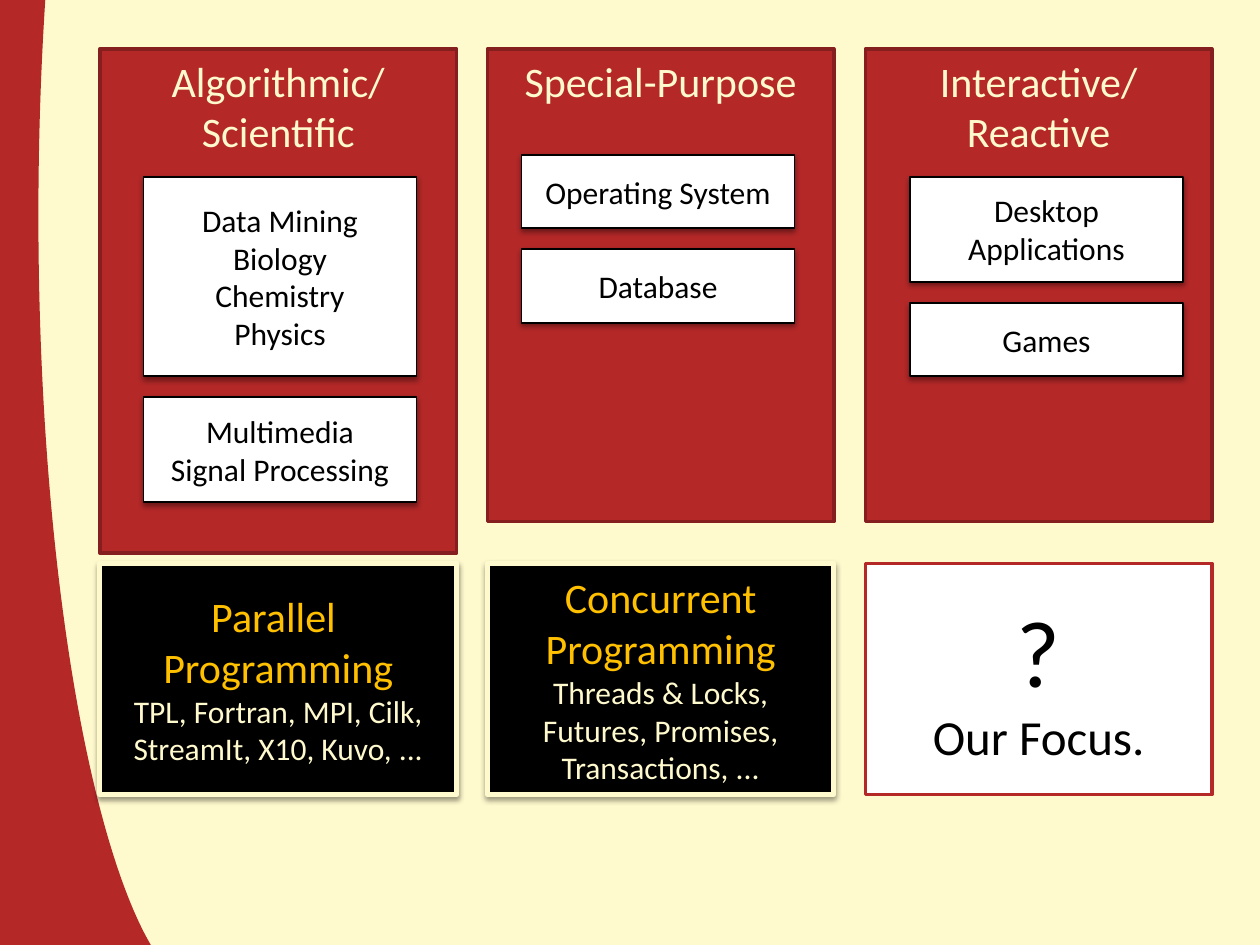
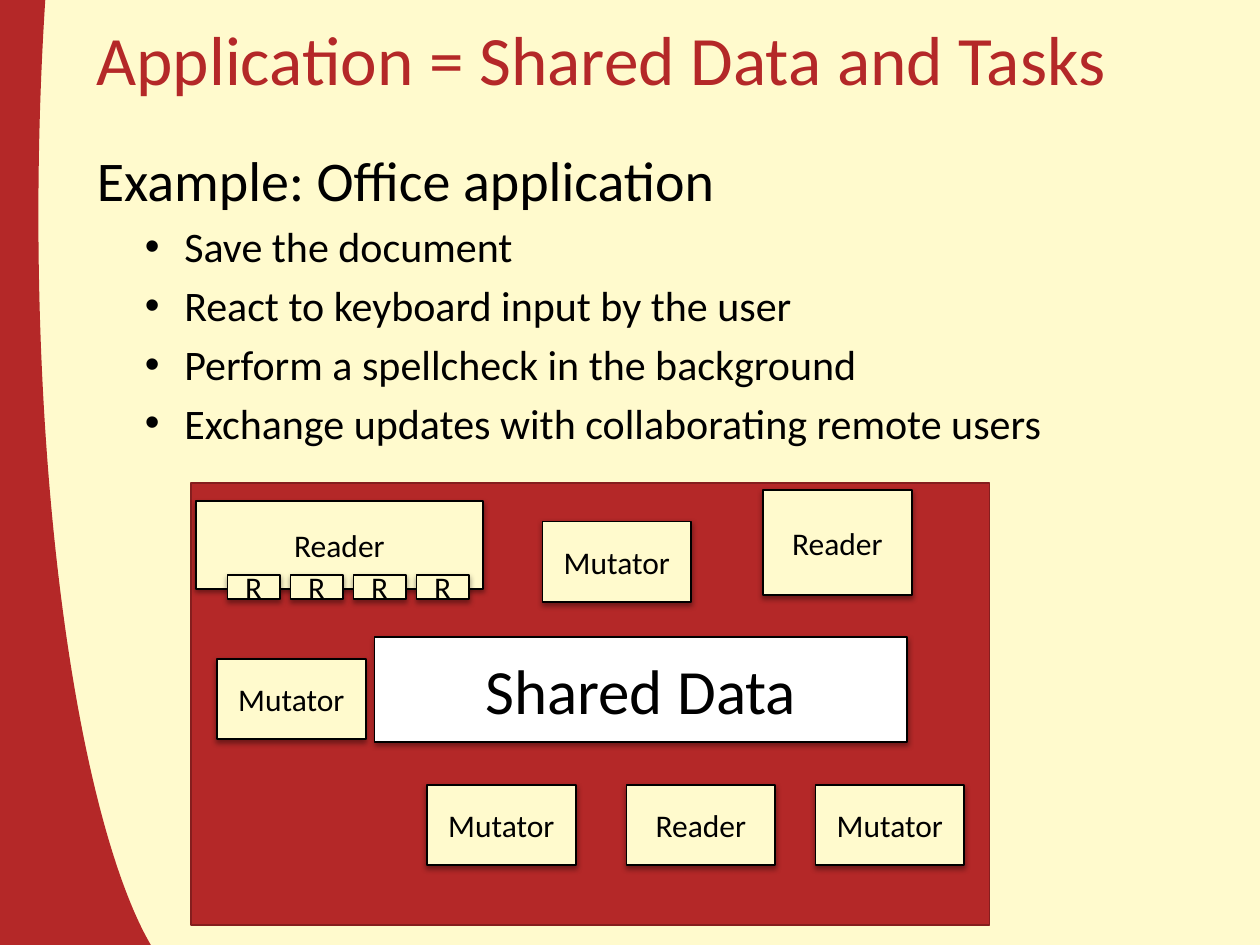
from dataclasses import dataclass
from lxml.etree import SubElement
from pptx import Presentation
from pptx.dml.color import RGBColor
from pptx.enum.shapes import MSO_SHAPE
from pptx.enum.text import MSO_ANCHOR, PP_ALIGN
from pptx.oxml.ns import qn
from pptx.util import Pt


@dataclass(frozen=True)
class Theme:
    font: str = "Calibri"
    cream: str = "FFFACD"
    red: str = "B42828"
    dark_red: str = "851E1E"
    black: str = "000000"
    white: str = "FFFFFF"
    amber: str = "FFC000"
    title: float = 39.6
    question: float = 54
    shared_data: float = 36
    lead: float = 32
    focus: float = 28
    heading: float = 24
    label: float = 18


THEME = Theme()

DOMAINS = [
    {"left": 57, "width": 204, "height": 288, "heading": "Algorithmic/\nScientific",
     "topics_left": 82, "topics_top": 101,
     "topics": [("Data Mining\nBiology\nChemistry\nPhysics", 114),
                ("Multimedia\nSignal Processing", 60)]},
    {"left": 278.5, "width": 198, "height": 270, "heading": "Special-Purpose",
     "topics_left": 298, "topics_top": 88.5,
     "topics": [("Operating System", 42), ("Database", 42)]},
    {"left": 494.5, "width": 198, "height": 270, "heading": "Interactive/\nReactive",
     "topics_left": 520, "topics_top": 101,
     "topics": [("Desktop Applications", 60), ("Games", 42)]},
]
DOMAIN_TOP, TOPIC_WIDTH, TOPIC_GAP = 28, 156, 12

APPROACH_TOP, APPROACH_HEIGHT = 322, 132
APPROACHES = [
    ("Parallel \vProgramming", "TPL, Fortran, MPI, Cilk, StreamIt, X10, Kuvo, ..."),
    ("Concurrent Programming", "Threads & Locks, Futures, Promises, Transactions, ..."),
]
FOCUS = ("?", "Our Focus.")

TITLE = "Application = Shared Data and Tasks"
EXAMPLE = "Example: Office application"
EXAMPLE_TASKS = [
    "Save the document",
    "React to keyboard input by the user",
    "Perform a spellcheck in the background",
    "Exchange updates with collaborating remote users",
]
APPLICATION = (109, 276, 456.5, 252.5)
SHARED_DATA = ("Shared Data", (214, 364, 304.5, 60))
TASK_WIDTH, TASK_HEIGHT = 85, 46
TASKS = [
    ("Mutator", 310, 298),
    ("Mutator", 124, 376.5),
    ("Mutator", 244, 448.5),
    ("Reader", 358, 448.5),
    ("Mutator", 466, 448.5),
]
LARGE_READERS = [("Reader", (436, 280, 85, 60)), ("Reader", (112, 286.5, 164, 50))]
SUBREADER, SUBREADER_COUNT, SUBREADER_STEP = (130, 328.5, 30, 14), 4, 36


def colour(code):
    return RGBColor.from_string(code)


def write(frame, text, styles, align=PP_ALIGN.CENTER, anchor=MSO_ANCHOR.MIDDLE):
    frame.word_wrap = True
    frame.vertical_anchor = anchor
    frame.text = text
    for index, paragraph in enumerate(frame.paragraphs):
        size, code = styles[min(index, len(styles) - 1)]
        paragraph.alignment = align
        for run in paragraph.runs:
            run.font.name = THEME.font
            run.font.size = Pt(size)
            run.font.color.rgb = colour(code)


def add_shadow(shape):
    effects = shape._element.spPr.find(qn("a:effectLst"))
    shadow = SubElement(effects, qn("a:outerShdw"), blurRad=str(Pt(3.1)),
                        dist=str(Pt(1.6)), dir="5400000", rotWithShape="0")
    black = SubElement(shadow, qn("a:srgbClr"), val=THEME.black)
    SubElement(black, qn("a:alpha"), val="38000")


def add_box(slide, place, fill, line, line_width=1, text="", styles=(),
            anchor=MSO_ANCHOR.MIDDLE, shadow=False):
    box = slide.shapes.add_shape(MSO_SHAPE.RECTANGLE, *map(Pt, place))
    box.shadow.inherit = False
    box.fill.solid()
    box.fill.fore_color.rgb = colour(fill)
    box.line.color.rgb = colour(line)
    box.line.width = Pt(line_width)
    if shadow:
        add_shadow(box)
    if text:
        write(box.text_frame, text, styles, anchor=anchor)


def add_card(slide, place, text, fill=THEME.white, size=THEME.label):
    add_box(slide, place, fill, THEME.black, text=text,
            styles=[(size, THEME.black)], shadow=True)


def add_text(slide, place, text, styles, anchor):
    frame = slide.shapes.add_textbox(*map(Pt, place)).text_frame
    write(frame, text, styles, PP_ALIGN.LEFT, anchor)
    return frame


def add_slide(deck):
    slide = deck.slides.add_slide(deck.slide_layouts[6])
    slide.background.fill.solid()
    slide.background.fill.fore_color.rgb = colour(THEME.cream)
    band = slide.shapes.add_shape(MSO_SHAPE.ARC, Pt(-18), Pt(-348), Pt(222), Pt(942))
    band.adjustments[0] = 177.665
    band.adjustments[1] = 55.34
    band._element.spPr.find(qn("a:xfrm")).set("flipH", "1")
    band.shadow.inherit = False
    band.fill.background()
    band.line.color.rgb = colour(THEME.red)
    band.line.width = Pt(80)
    return slide


def build_domains(deck):
    slide = add_slide(deck)
    for domain in DOMAINS:
        add_box(slide, (domain["left"], DOMAIN_TOP, domain["width"], domain["height"]),
                THEME.red, THEME.dark_red, 2, domain["heading"],
                [(THEME.heading, THEME.cream)], MSO_ANCHOR.TOP)
        top = domain["topics_top"]
        for topic, height in domain["topics"]:
            add_card(slide, (domain["topics_left"], top, TOPIC_WIDTH, height), topic)
            top += height + TOPIC_GAP

    places = [(d["left"], APPROACH_TOP, d["width"], APPROACH_HEIGHT) for d in DOMAINS]
    for place, approach in zip(places, APPROACHES):
        add_box(slide, place, THEME.black, THEME.cream, 3, "\n".join(approach),
                [(THEME.heading, THEME.amber), (THEME.label, THEME.cream)], shadow=True)
    add_box(slide, places[-1], THEME.white, THEME.red, 2, "\n".join(FOCUS),
            [(THEME.question, THEME.black), (THEME.focus, THEME.black)])


def build_application(deck):
    slide = add_slide(deck)
    add_box(slide, APPLICATION, THEME.red, THEME.dark_red)
    add_text(slide, (48, -12, 648, 90), TITLE, [(THEME.title, THEME.red)],
             MSO_ANCHOR.MIDDLE)

    example = add_text(slide, (48.25, 79.5, 595.5, 187),
                       "\n".join([EXAMPLE, *EXAMPLE_TASKS]),
                       [(THEME.lead, THEME.black), (THEME.heading, THEME.black)],
                       MSO_ANCHOR.TOP)
    for paragraph in example.paragraphs[1:]:
        paragraph.space_before = Pt(0.2 * THEME.heading)
        properties = paragraph._p.get_or_add_pPr()
        properties.set("marL", str(Pt(50)))
        properties.set("indent", str(Pt(-22.5)))
        SubElement(properties, qn("a:buFont"), typeface="Arial")
        SubElement(properties, qn("a:buChar"), char="•")

    shared_text, shared_place = SHARED_DATA
    add_card(slide, shared_place, shared_text, size=THEME.shared_data)
    for task, left, top in TASKS:
        add_card(slide, (left, top, TASK_WIDTH, TASK_HEIGHT), task, THEME.cream)
    for reader, place in LARGE_READERS:
        add_card(slide, place, reader, THEME.cream)
    left, top, width, height = SUBREADER
    for index in range(SUBREADER_COUNT):
        add_card(slide, (left + index * SUBREADER_STEP, top, width, height), "R",
                 THEME.cream)


def main():
    deck = Presentation()
    deck.slide_width, deck.slide_height = Pt(720), Pt(540)
    build_domains(deck)
    build_application(deck)
    deck.save("out.pptx")


if __name__ == "__main__":
    main()
